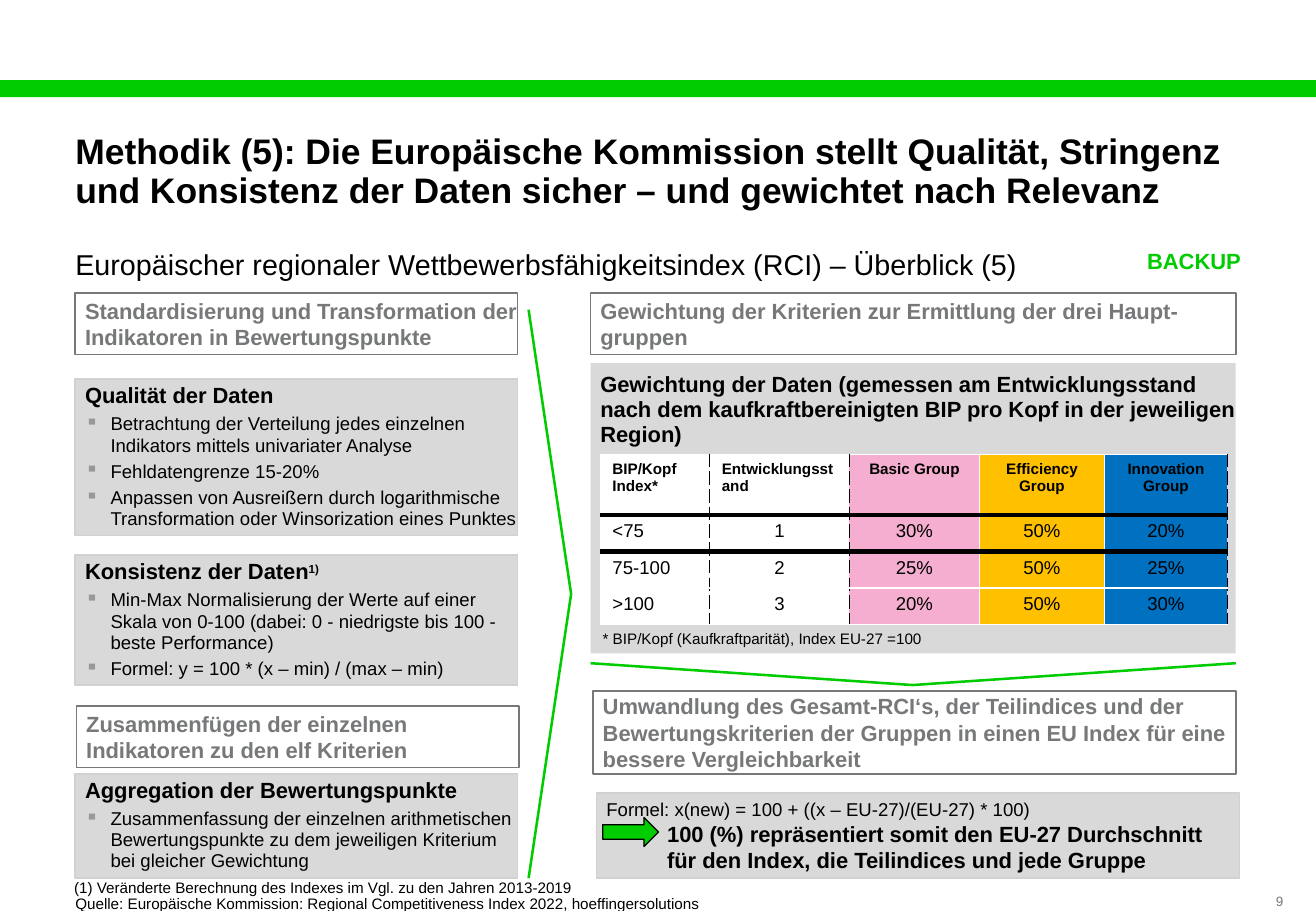
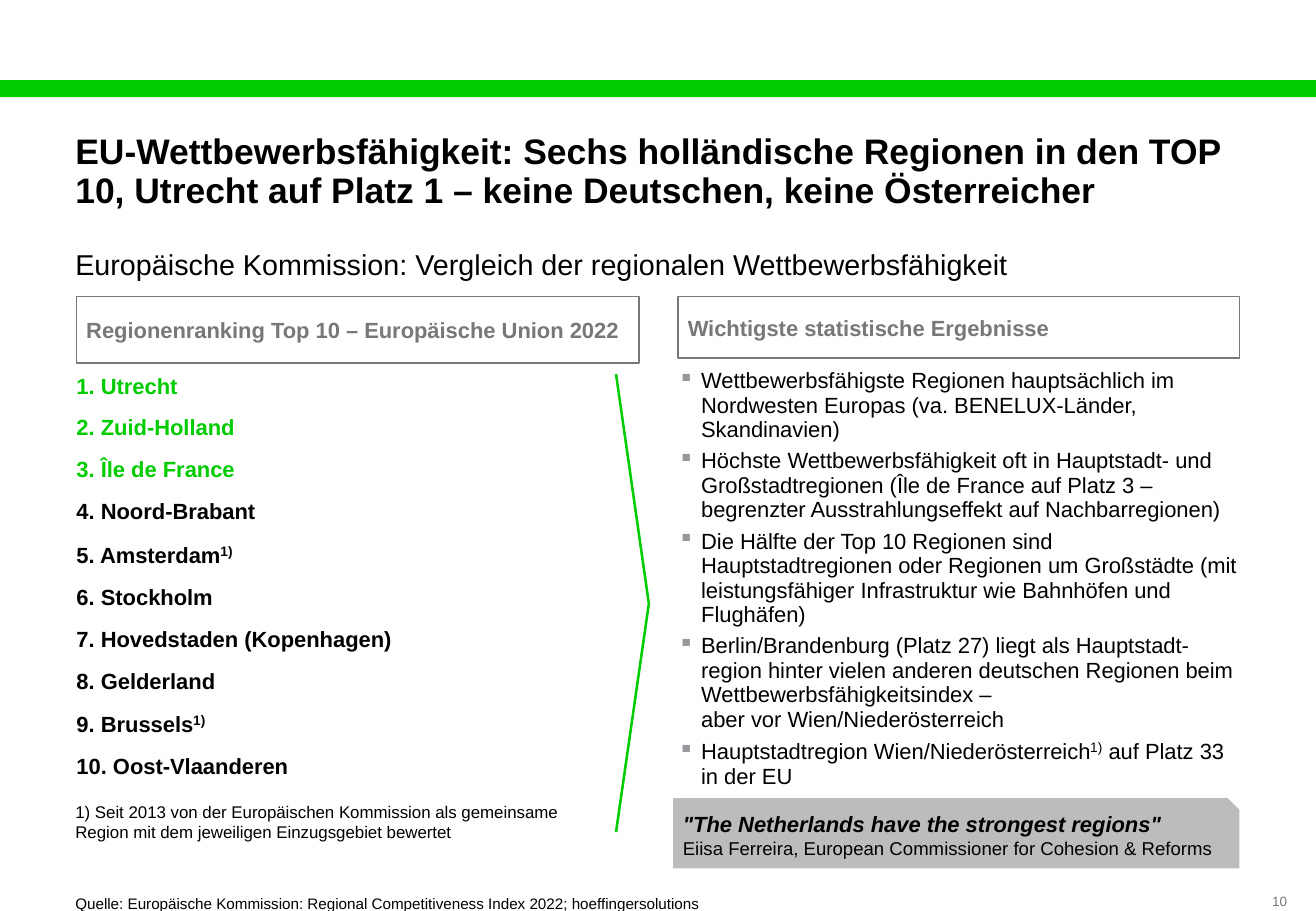
import pptx
import pptx.util
import pptx.dml.color
import pptx.enum.shapes
import pptx.enum.text
import pptx.oxml
import pptx.oxml.ns

Inches, Pt = pptx.util.Inches, pptx.util.Pt
SHAPE = pptx.enum.shapes.MSO_SHAPE
ANCHOR = pptx.enum.text.MSO_ANCHOR
ALIGN = pptx.enum.text.PP_ALIGN
NS = pptx.oxml.ns.nsdecls("a")

FONT = "Arial"
BLACK, WHITE, GREEN = "000000", "FFFFFF", "00CC00"
GREY, PANEL, PANEL_LINE = "76787A", "D9D9D9", "D0D1D2"
BULLET, QUOTE = "96989B", "BBBCBE"


def rgb(value):
    return pptx.dml.color.RGBColor.from_string(value)


def para(text, size, color=BLACK, **options):
    """One paragraph; text between ^ marks is superscript."""
    return dict(text=text, size=size, color=color, **options)


def head(text):
    return para(text, 13, bold=True, spacing=0.95, sup=12)


def points(size, indent, spacing, before, texts, **options):
    return [para(t, size, bullet=indent, spacing=spacing, before=before, **options)
            for t in texts]


class Deck:
    def __init__(self):
        self.prs = pptx.Presentation()
        self.prs.slide_width, self.prs.slide_height = Inches(10.83), Inches(7.5)
        self.s = None

    def slide(self, number, title, subtitle, source):
        """New slide with band, title, subtitle, source and page number."""
        self.s = self.prs.slides.add_slide(self.prs.slide_layouts[6])
        self.shape((0, 0.66, 10.83, 0.14), GREEN)
        self.text((0.62, 1.09, 9.57, 0.72), [para(title, 21, bold=True, spacing=0.93)])
        self.text((0.62, 2.03, 9.57, 0.29), [para(subtitle, 17)])
        self.text((0.62, 7.36, 6.43, 0.15), [para(source, 9)], anchor=ANCHOR.BOTTOM)
        self.text((10.22, 7.35, 0.62, 0.13), [para(number, 8, GREY, align=ALIGN.CENTER)],
                  anchor=ANCHOR.MIDDLE)

    def fill_frame(self, tf, paras, insets=(0, 0, 0, 0), anchor=ANCHOR.TOP):
        left, top, right, bottom = map(Inches, insets)
        frame = dict(word_wrap=True, vertical_anchor=anchor, margin_left=left,
                     margin_top=top, margin_right=right, margin_bottom=bottom)
        for name, value in frame.items():
            setattr(tf, name, value)
        for i, item in enumerate(paras):
            p = tf.paragraphs[0] if i == 0 else tf.add_paragraph()
            self.fill_paragraph(p, item, first=i == 0)

    def fill_paragraph(self, p, item, first=True):
        pPr = p._p.get_or_add_pPr()
        hang = item.get("bullet", 0)
        pPr.set("marL", str(Inches(hang or item.get("indent", 0))))
        pPr.set("indent", str(-Inches(hang)))
        if hang:
            for xml in (f'<a:buClr {NS}><a:srgbClr val="{BULLET}"/></a:buClr>',
                        f'<a:buChar {NS} char="▪"/>'):
                pPr.append(pptx.oxml.parse_xml(xml))
        layout = dict(alignment=item.get("align", ALIGN.LEFT),
                      line_spacing=item.get("spacing", 1.0),
                      space_before=Pt(0 if first else item.get("before", 0)))
        for name, value in layout.items():
            setattr(p, name, value)
        for i, part in enumerate(item["text"].split("^")):
            for j, line in enumerate(part.split("\n")):
                if j:
                    p.add_line_break()
                    p._p[-1].append(pptx.oxml.parse_xml(
                        f'<a:rPr {NS} sz="{item["size"] * 100}"/>'))
                if line:
                    self.run(p, line, item, sup=i % 2 == 1)

    def run(self, p, text, item, sup):
        r = p.add_run()
        r.text = text
        font = dict(name=FONT, size=Pt(item["sup"] if sup else item["size"]),
                    bold=item.get("bold", False), italic=item.get("italic", False))
        for name, value in font.items():
            setattr(r.font, name, value)
        r.font.color.rgb = rgb(item["color"])
        if sup:
            r._r.get_or_add_rPr().set("baseline", "30000")

    def text(self, box, paras, **frame):
        sp = self.s.shapes.add_textbox(*map(Inches, box))
        self.fill_frame(sp.text_frame, paras, **frame)

    def outline(self, sp, color, width):
        sp.shadow.inherit = False
        if color:
            sp.line.color.rgb = rgb(color)
            sp.line.width = Pt(width)
        else:
            sp.line.fill.background()

    def shape(self, box, fill, line=None, width=1, kind=SHAPE.RECTANGLE, paras=(), **frame):
        sp = self.s.shapes.add_shape(kind, *map(Inches, box))
        sp.fill.solid()
        sp.fill.fore_color.rgb = rgb(fill)
        self.outline(sp, line, width)
        if paras:
            self.fill_frame(sp.text_frame, paras, **frame)

    def header(self, box, text):
        self.shape(box, WHITE, GREY, paras=[para(text, 13, GREY, bold=True)],
                   insets=(0.08, 0, 0, 0), anchor=ANCHOR.MIDDLE)

    def panel(self, box, paras):
        self.shape(box, PANEL, PANEL_LINE, paras=paras, insets=(0.08, 0.04, 0, 0.04))

    def chevron(self, *corners):
        start, *rest = [tuple(map(Inches, c)) for c in corners]
        builder = self.s.shapes.build_freeform(*start)
        builder.add_line_segments(rest, close=False)
        sp = builder.convert_to_shape()
        sp.fill.background()
        self.outline(sp, GREEN, 1.5)

    def border(self, cell, side, color, width, dash="solid"):
        cell._tc.get_or_add_tcPr().append(pptx.oxml.parse_xml(
            f'<a:ln{side} {NS} w="{Pt(width)}"><a:solidFill><a:srgbClr val="{color}"/>'
            f'</a:solidFill><a:prstDash val="{dash}"/></a:ln{side}>'))

    def table(self, at, widths, heights, rows, fills, dashed, thick):
        """Grid lines are numbered from 0; dashed are vertical, thick horizontal."""
        box = (*at, sum(widths), sum(heights))
        table = self.s.shapes.add_table(len(rows), len(widths), *map(Inches, box)).table
        table.first_row = table.horz_banding = False
        for col, width in zip(table.columns, widths):
            col.width = Inches(width)
        for row, height in zip(table.rows, heights):
            row.height = Inches(height)
        thin = (WHITE, 1)
        for i, row in enumerate(rows):
            for j, text in enumerate(row):
                cell = table.cell(i, j)
                for side, line in (("L", j), ("R", j + 1)):
                    self.border(cell, side, *((BLACK, 0.5, "lgDash") if line in dashed else thin))
                for side, line in (("T", i), ("B", i + 1)):
                    self.border(cell, side, *((BLACK, 3) if line in thick else thin))
                cell.fill.solid()
                cell.fill.fore_color.rgb = rgb(fills[j])
                left = j == 0 or (i == 0 and j == 1)
                style = dict(size=11 if i else 9, bold=i == 0,
                             align=ALIGN.LEFT if left else ALIGN.CENTER)
                for k, line in enumerate(text.split("\n")):
                    tf = cell.text_frame
                    p = tf.add_paragraph() if k else tf.paragraphs[0]
                    self.fill_paragraph(p, para(line, **style))


def method_slide(d):
    d.slide("9", "Methodik (5): Die Europäische Kommission stellt Qualität, Stringenz "
            "und Konsistenz der Daten sicher – und gewichtet nach Relevanz",
            "Europäischer regionaler Wettbewerbsfähigkeitsindex (RCI) – Überblick (5)",
            "Quelle: Europäische Kommission: Regional Competitiveness Index 2022, "
            "hoeffingersolutions")
    d.text((9.2, 2.04, 1.01, 0.22), [para("BACKUP", 13, GREEN, bold=True, align=ALIGN.RIGHT)],
           anchor=ANCHOR.MIDDLE)

    # Left column
    x, w = 0.62, 3.64
    d.header((x, 2.41, w, 0.51),
             "Standardisierung und Transformation der Indikatoren in Bewertungspunkte")
    d.header((x + 0.01, 5.81, w, 0.51),
             "Zusammenfügen der einzelnen Indikatoren zu den elf Kriterien")
    panels = [
        (3.12, 1.29, "Qualität der Daten", [
            "Betrachtung der Verteilung jedes einzelnen Indikators mittels univariater Analyse",
            "Fehldatengrenze 15-20%",
            "Anpassen von Ausreißern durch logarithmische Transformation oder "
            "Winsorization eines Punktes"]),
        (4.57, 1.07, "Konsistenz der Daten^1)^", [
            "Min-Max Normalisierung der Werte auf einer Skala von 0-100 "
            "(dabei: 0 - niedrigste bis 100 - beste Performance)",
            "Formel: y = 100 * (x – min) / (max – min)"]),
        (6.37, 0.86, "Aggregation der Bewertungspunkte", [
            "Zusammenfassung der einzelnen arithmetischen Bewertungspunkte "
            "zu dem jeweiligen Kriterium bei gleicher Gewichtung"]),
    ]
    for y, h, title, texts in panels:
        d.panel((x, y, w, h), [head(title)] + points(11, 0.21, 0.95, 3, texts))
    d.text((0.61, 7.23, 5.03, 0.15),
           [para("(1) Veränderte Berechnung des Indexes im Vgl. zu den Jahren 2013-2019", 9)])
    d.chevron((4.35, 7.23), (4.7, 4.89), (4.35, 2.55))

    # Weighting table
    x, w = 4.86, 5.31
    d.header((x, 2.41, w, 0.51),
             "Gewichtung der Kriterien zur Ermittlung der drei Haupt-gruppen")
    d.shape((x, 2.99, w, 2.39), PANEL, insets=(0.08, 0.08, 0, 0), paras=[
        head("Gewichtung der Daten (gemessen am Entwicklungsstand nach dem "
             "kaufkraftbereinigten BIP pro Kopf in der jeweiligen Region)")])
    d.table((4.94, 3.74), (0.9, 1.15, 1.07, 1.03, 1.01), (0.5, 0.3, 0.3, 0.3), [
        ("BIP/Kopf\nIndex*", "Entwicklungsstand", "Basic Group", "Efficiency Group",
         "Innovation Group"),
        ("<75", "1", "30%", "50%", "20%"),
        ("75-100", "2", "25%", "50%", "25%"),
        (">100", "3", "20%", "50%", "30%"),
    ], fills=(WHITE, WHITE, "F5AECF", "FFC000", "0070C0"), dashed=(1, 2, 5), thick=(1, 2))
    d.text((4.96, 5.18, 2.9, 0.15),
           [para("* BIP/Kopf (Kaufkraftparität), Index EU-27 =100", 9)])
    d.chevron((4.86, 5.46), (7.51, 5.64), (10.17, 5.46))

    # Conversion to the EU index
    d.header((4.88, 5.69, 5.29, 0.68),
             "Umwandlung des Gesamt-RCI‘s, der Teilindices und der Bewertungskriterien "
             "der Gruppen in einen EU Index für eine bessere Vergleichbarkeit")
    d.panel((4.91, 6.53, 5.29, 0.7), [
        para("Formel: x(new) = 100 + ((x – EU-27)/(EU-27) * 100)", 11),
        para("100 (%) repräsentiert somit den EU-27 Durchschnitt\n"
             "für den Index, die Teilindices und jede Gruppe", 13, bold=True, indent=0.5)])
    d.shape((4.96, 6.73, 0.46, 0.24), GREEN, BLACK, 0.75, SHAPE.RIGHT_ARROW)


def ranking_slide(d):
    d.slide("10", "EU-Wettbewerbsfähigkeit: Sechs holländische Regionen in den TOP 10, "
            "Utrecht auf Platz 1 – keine Deutschen, keine Österreicher",
            "Europäische Kommission: Vergleich der regionalen Wettbewerbsfähigkeit",
            "Quelle: Europäische Kommission: Regional Competitiveness Index 2022; "
            "hoeffingersolutions")

    # Ranking
    d.header((0.63, 2.44, 4.63, 0.55), "Regionenranking Top 10 – Europäische Union 2022")
    regions = ["Utrecht", "Zuid-Holland", "Île de France", "Noord-Brabant", "Amsterdam^1)^",
               "Stockholm", "Hovedstaden (Kopenhagen)", "Gelderland", "Brussels^1)^",
               "Oost-Vlaanderen"]
    d.text((0.63, 3.08, 4.4, 3.37), [
        para(f"{rank}. {region}", 13, GREEN if rank <= 3 else BLACK, bold=True,
             spacing=0.95, before=10, sup=14)
        for rank, region in enumerate(regions, 1)])
    d.text((0.62, 6.58, 4.09, 0.35), [
        para("1) Seit 2013 von der Europäischen Kommission als gemeinsame Region "
             "mit dem jeweiligen Einzugsgebiet bewertet", 10)], anchor=ANCHOR.BOTTOM)
    d.chevron((5.07, 6.85), (5.34, 4.97), (5.07, 3.08))

    # Findings
    d.header((5.58, 2.44, 4.62, 0.51), "Wichtigste statistische Ergebnisse")
    d.text((5.58, 3.03, 4.62, 3.48), points(13, 0.19, 0.93, 4, [
        "Wettbewerbsfähigste Regionen hauptsächlich im Nordwesten Europas "
        "(va. BENELUX-Länder, Skandinavien)",
        "Höchste Wettbewerbsfähigkeit oft in Hauptstadt- und Großstadtregionen "
        "(Île de France auf Platz 3 – begrenzter Ausstrahlungseffekt auf Nachbarregionen)",
        "Die Hälfte der Top 10 Regionen sind Hauptstadtregionen oder Regionen um Großstädte "
        "(mit leistungsfähiger Infrastruktur wie Bahnhöfen und Flughäfen)",
        "Berlin/Brandenburg (Platz 27) liegt als Hauptstadt-region hinter vielen anderen "
        "deutschen Regionen beim Wettbewerbsfähigkeitsindex –\n"
        "aber vor Wien/Niederösterreich",
        "Hauptstadtregion Wien/Niederösterreich^1)^ auf Platz 33 in der EU",
    ], sup=14), anchor=ANCHOR.MIDDLE)

    # Quote
    d.shape((5.54, 6.57, 4.66, 0.58), QUOTE, kind=SHAPE.SNIP_1_RECTANGLE, paras=[
        para('"The Netherlands have the strongest regions"', 13, bold=True, italic=True),
        para("Eiisa Ferreira, European Commissioner for Cohesion & Reforms", 11),
    ], insets=(0.08, 0, 0, 0.08), anchor=ANCHOR.BOTTOM)


def main():
    d = Deck()
    method_slide(d)
    ranking_slide(d)
    d.prs.save("out.pptx")


if __name__ == "__main__":
    main()
